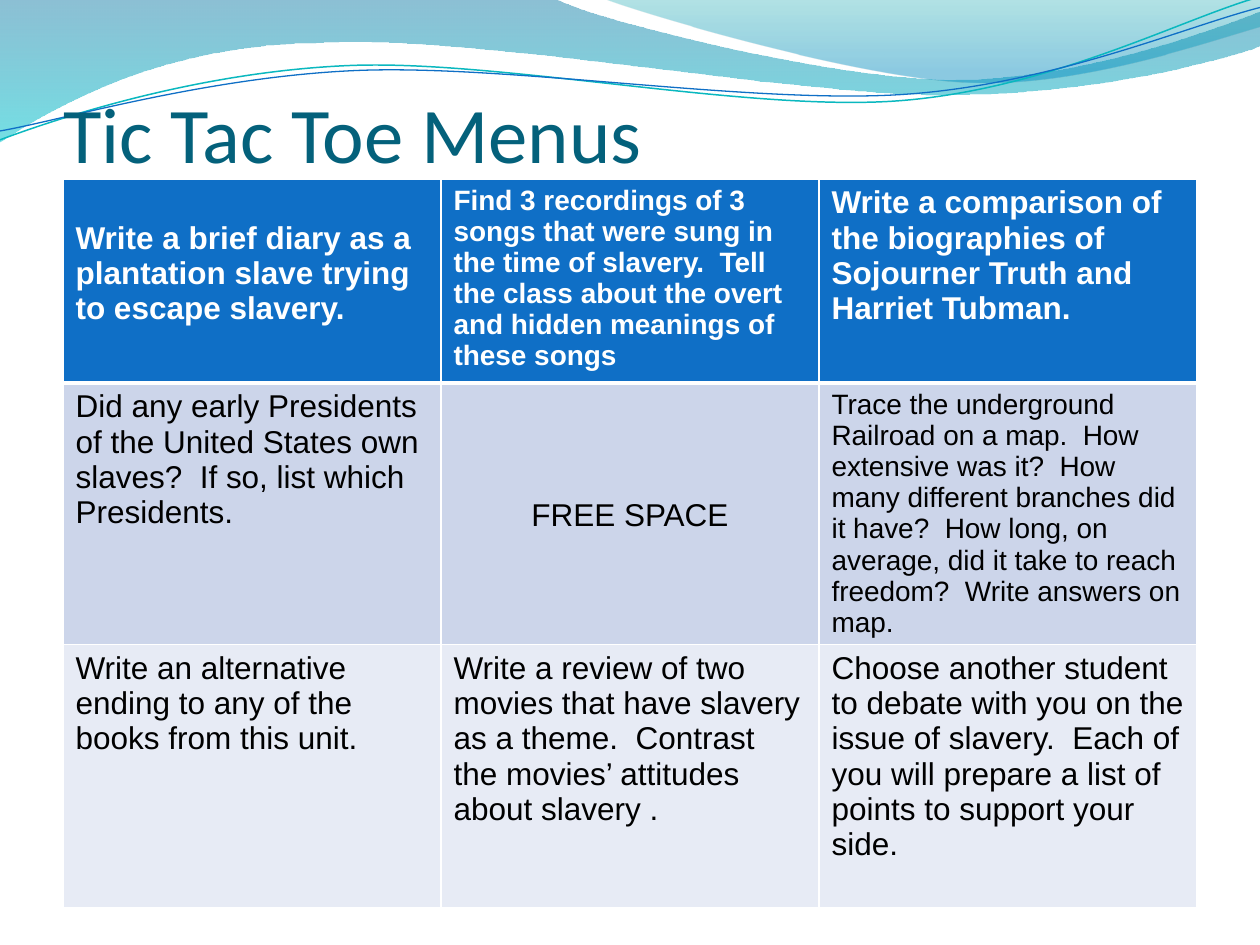
from math import cos, radians, sin

from lxml import etree
from pptx import Presentation
from pptx.dml.color import RGBColor
from pptx.enum.text import MSO_ANCHOR, MSO_AUTO_SIZE, PP_ALIGN
from pptx.oxml.ns import qn
from pptx.util import Inches, Pt

LEFT, CENTER = PP_ALIGN.LEFT, PP_ALIGN.CENTER
BOTTOM, NO_FIT = MSO_ANCHOR.BOTTOM, MSO_AUTO_SIZE.NONE
TITLE_ONLY = 5
TILT = 2.7
COLORS = {
    "white": "FFFFFF", "black": "000000", "title": "04617B",
    "header": "0F6FC6", "band": "CCD5EA", "pale": "E7EBF5",
    "teal_line": "0AB8BF", "blue_line": "0F6FC6",
    "deep": "0074A1", "aqua": "00C6CF", "teal": "00A1A9", "sky": "008BBF",
}
LEFT_WAVE = [
    (0, -0.01), (4.4, -0.01), (4.76, 0.17, 6.64, 0.63, 7.58, 0.63),
    (8.53, 0.63, 9.58, 0.26, 10, 0.09), (10.01, 0.36),
    (9.83, 0.44, 8.7, 0.76, 7.46, 0.75), (6.22, 0.75, 3.82, 0.28, 2.57, 0.34),
    (1.29, 0.35, 0.46, 0.83, -0.01, 1.13), (0, -0.01),
]
RIGHT_WAVE = [
    (4.79, -0.01), (5.09, 0.11, 6.82, 0.62, 7.69, 0.65),
    (8.56, 0.69, 9.61, 0.32, 10, 0.21), (10, 0), (4.79, -0.01),
]
TEAL_CURVE = [
    (0, 1.11), (0.48, 0.93, 1.58, 0.57, 2.77, 0.52),
    (3.95, 0.47, 5.93, 0.89, 7.13, 0.8), (8.33, 0.71, 9.38, 0.15, 9.98, -0.02),
]
BLUE_CURVE = [
    (0, 1.04), (0.47, 0.96, 1.64, 0.61, 2.83, 0.56),
    (4.03, 0.51, 5.97, 0.83, 7.17, 0.75), (8.36, 0.67, 9.41, 0.21, 10, 0.06),
]
MENU = [
    [("Write a brief diary as a plantation slave trying to escape slavery.", {"top": 0.33}),
     ("Find 3 recordings of 3 songs that were sung in the time of slavery.  Tell the class "
      "about the overt and hidden meanings of these songs", {"size": 16}),
     ("Write a comparison of the biographies of Sojourner Truth and Harriet Tubman.", {})],
    [("Did any early Presidents of the United States own slaves?  If so, list which "
      "Presidents.", {}),
     ("FREE SPACE", {"top": 0.91, "align": CENTER}),
     ("Trace the underground Railroad on a map.  How extensive was it?  How many different "
      "branches did it have?  How long, on average, did it take to reach freedom?  Write "
      "answers on map.", {"size": 16})],
    [("Write an alternative ending to any of the books from this unit.", {}),
     ("Write a review of two movies that have slavery as a theme.  Contrast the movies’ "
      "attitudes about slavery .", {}),
     ("Choose another student to debate with you on the issue of slavery.  Each of you will "
      "prepare a list of points to support your side.", {})],
]
ROW_FILLS = ["header", "band", "pale"]
ROW_HEIGHTS = [1.62, 1.87, 2.09]


def rgb(name):
    """Return the named colour."""
    return RGBColor.from_string(COLORS[name])


def write(frame, text, *, size=18, font="Arial", color="black", bold=False, align=LEFT):
    """Write one formatted paragraph into a text frame."""
    para = frame.paragraphs[0]
    para.alignment = align
    span = para.add_run()
    span.text = text
    span.font.size, span.font.name, span.font.bold = Pt(size), font, bold
    span.font.color.rgb = rgb(color)


def turn(segments, center, degrees):
    """Turn every point of the segments clockwise around a center."""
    cosine, sine = cos(radians(degrees)), sin(radians(degrees))
    turned = []
    for segment in segments:
        points = []
        for x, y in zip(segment[::2], segment[1::2]):
            dx, dy = x - center[0], y - center[1]
            points += [center[0] + dx * cosine - dy * sine,
                       center[1] + dx * sine + dy * cosine]
        turned.append(tuple(points))
    return turned


def add_outline(page, segments, close):
    """Add a freeform of straight lines and cubic curves."""
    points = [(Inches(x), Inches(y)) for segment in segments
              for x, y in zip(segment[::2], segment[1::2])]
    builder = page.shapes.build_freeform(*points[0])
    builder.add_line_segments(points[1:], close=close)
    shape = builder.convert_to_shape()
    shape.shadow.inherit = False
    steps = iter(list(shape._element.iter(qn("a:lnTo"))))
    for segment in segments[1:]:
        first = next(steps)
        if len(segment) == 6:
            first.tag = qn("a:cubicBezTo")
            for _ in range(2):
                step = next(steps)
                first.append(step[0])
                step.getparent().remove(step)
    return shape


def add_wave(page, segments, stops):
    """Add a translucent gradient wave; stops hold position, colour and opacity."""
    shape = add_outline(page, segments, True)
    shape.line.fill.background()
    shape.fill.gradient()
    shape.fill.gradient_angle = 270
    for stop, (position, color, _) in zip(shape.fill.gradient_stops, stops):
        stop.position = position
        stop.color.rgb = rgb(color)
    gradient = shape._element.spPr.find(qn("a:gradFill"))
    for tint, (_, _, opacity) in zip(gradient.iter(qn("a:srgbClr")), stops):
        etree.SubElement(tint, qn("a:alpha"), val=str(opacity * 1000))


def add_curve(page, segments, center, color, width):
    """Add an open curved line in a tilted box."""
    shape = add_outline(page, turn(segments, center, TILT), False)
    shape.rotation = 360 - TILT
    shape.fill.background()
    shape.line.color.rgb = rgb(color)
    shape.line.width = Pt(width)


def add_waves(page):
    """Draw the wave band along the top of the page."""
    add_wave(page, LEFT_WAVE, [(0, "deep", 45), (1, "aqua", 55)])
    add_wave(page, RIGHT_WAVE, [(0, "teal", 30), (0.8, "sky", 45)])
    add_curve(page, TEAL_CURVE, (4.99, 0.58), "teal_line", 0.85)
    add_curve(page, BLUE_CURVE, (5, 0.59), "blue_line", 0.75)


def place_title(page, left, top, width, height):
    """Place the title in front of the waves."""
    title = page.shapes.title
    title.left, title.top = Inches(left), Inches(top)
    title.width, title.height = Inches(width), Inches(height)
    frame = title.text_frame
    frame.auto_size, frame.vertical_anchor, frame.word_wrap = NO_FIT, BOTTOM, True
    frame.margin_left = frame.margin_right = frame.margin_bottom = 0
    frame.margin_top = Inches(0.05)
    write(frame, "Tic Tac Toe Menus", size=45, font="Calibri", color="title")
    page.shapes._spTree.append(title._element)


def set_borders(cell, bottom):
    """Give a cell white borders, with its own bottom width."""
    properties = cell._tc.get_or_add_tcPr()
    for index, (side, width) in enumerate([("L", 1), ("R", 1), ("T", 1), ("B", bottom)]):
        line = etree.Element(qn(f"a:ln{side}"), w=str(Pt(width)))
        fill = etree.SubElement(line, qn("a:solidFill"))
        etree.SubElement(fill, qn("a:srgbClr"), val=COLORS["white"])
        properties.insert(index, line)


def add_menu(page, left, top, width):
    """Add the three by three table of choices."""
    frame = page.shapes.add_table(3, 3, Inches(left), Inches(top),
                                  Inches(width), Inches(sum(ROW_HEIGHTS)))
    table = frame.table
    for row, (choices, fill, height) in enumerate(zip(MENU, ROW_FILLS, ROW_HEIGHTS)):
        table.rows[row].height = Inches(height)
        header = row == 0
        for column, (text, options) in enumerate(choices):
            cell = table.cell(row, column)
            cell.fill.solid()
            cell.fill.fore_color.rgb = rgb(fill)
            set_borders(cell, 3 if header else 1)
            style = {"color": "white" if header else "black", "bold": header, **options}
            cell.margin_top = Inches(style.pop("top", 0.05))
            write(cell.text_frame, text, **style)


def main():
    """Build and save the deck."""
    deck = Presentation()
    deck.slide_width, deck.slide_height = Inches(10), Inches(7.5)
    page = deck.slides.add_slide(deck.slide_layouts[TITLE_ONLY])
    add_waves(page)
    place_title(page, 0.5, 0.77, 9, 0.65)
    add_menu(page, 0.5, 1.42, 9)
    deck.save("out.pptx")


if __name__ == "__main__":
    main()
